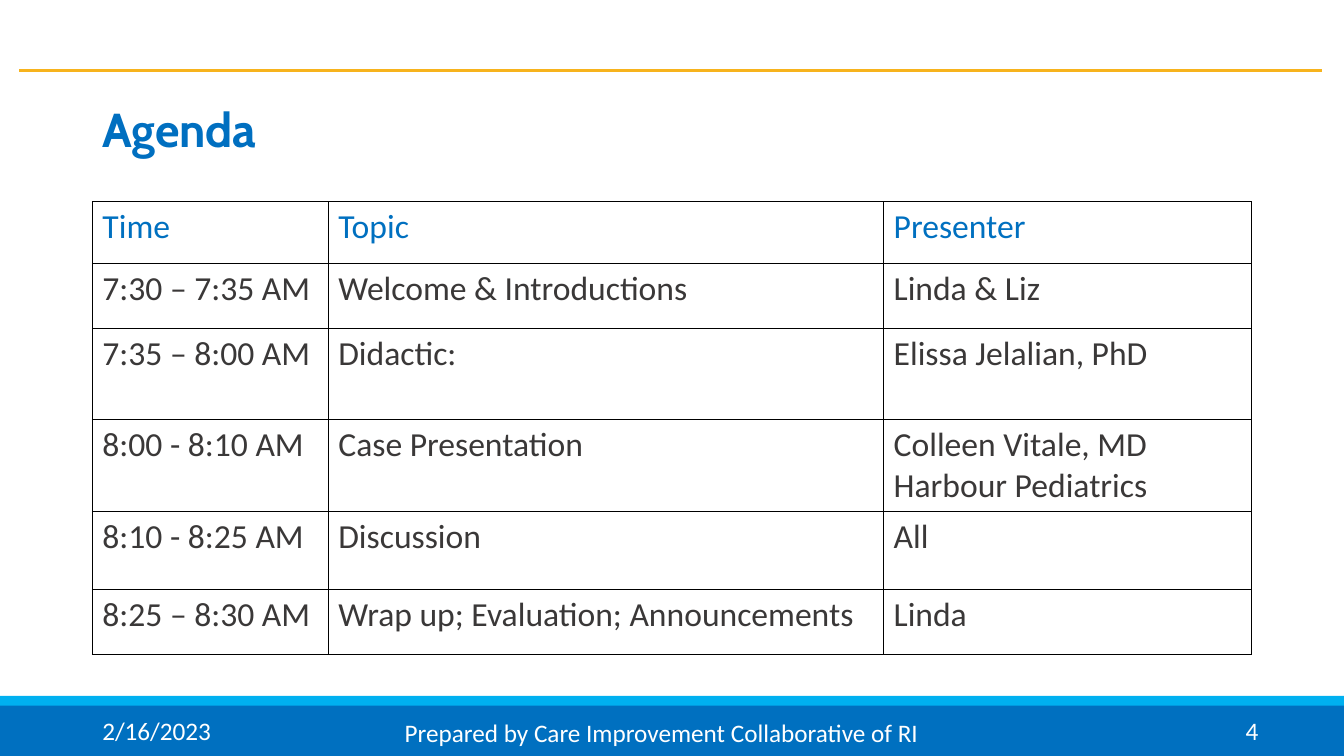
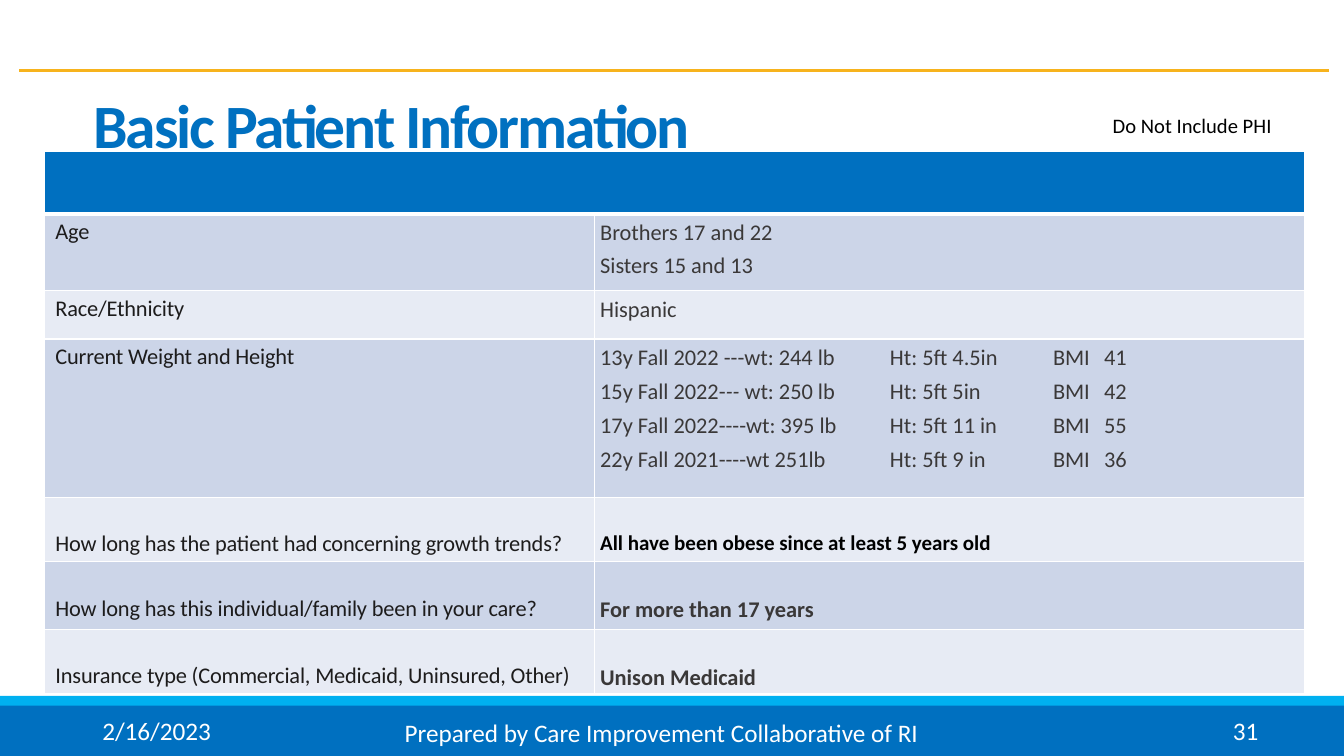
from lxml import etree
from pptx import Presentation
from pptx.dml.color import RGBColor
from pptx.enum.shapes import MSO_CONNECTOR, MSO_SHAPE
from pptx.enum.text import MSO_ANCHOR, PP_ALIGN
from pptx.oxml.ns import qn
from pptx.util import Pt

RECTANGLE, STRAIGHT = MSO_SHAPE.RECTANGLE, MSO_CONNECTOR.STRAIGHT
TOP, MIDDLE = MSO_ANCHOR.TOP, MSO_ANCHOR.MIDDLE
LEFT, RIGHT = PP_ALIGN.LEFT, PP_ALIGN.RIGHT

COLORS = {
    "white": "FFFFFF", "black": "000000", "blue": "0070C0", "sky": "00B0F0",
    "gold": "F7B31D", "agenda_title": "006FC0", "text": "3A3838",
    "label": "1D1C1C", "band_dark": "CCD5E8", "band_light": "E7EBF4",
}
BODY_FONT, TITLE_FONT = "Calibri", "Cabin"
WIDTH, HEIGHT = 960, 540
DEFAULT_INSETS = (7.2, 3.6, 7.2, 3.6)

# Content shared by the slides
DATE = "2/16/2023"
CREDIT = "Prepared by Care Improvement Collaborative of RI"

# Agenda: row height, then time, topic and presenter lines
AGENDA_COLUMNS = [168.5, 396.7, 262.8]
AGENDA = [
    (44.3, "Time", "Topic", ["Presenter"]),
    (46.4, "7:30 – 7:35 AM", "Welcome & Introductions", ["Linda & Liz"]),
    (65, "7:35 – 8:00 AM", "Didactic:", ["Elissa Jelalian, PhD"]),
    (65.7, "8:00 - 8:10 AM", "Case Presentation",
     ["Colleen Vitale, MD", "Harbour Pediatrics"]),
    (55.7, "8:10 - 8:25 AM", "Discussion", ["All"]),
    (46.4, "8:25 – 8:30 AM", "Wrap up; Evaluation; Announcements", ["Linda"]),
]

# Patient facts: row height, label, answer lines, answer spacing
PATIENT_COLUMNS = [392.4, 507.6]
PATIENT_HEADER_HEIGHT = 44.6
MEASURE_TABS = [207, 323.5, 360]
FACTS = [
    (54.7, "Age", ["Brothers 17 and 22", "Sisters 15 and 13"], 4),
    (34.6, "Race/Ethnicity", ["Hispanic"], 0),
    (113, "Current Weight and Height", [
        "13y Fall 2022 ---wt: 244 lb\tHt: 5ft 4.5in\tBMI\t41",
        [("15y Fall 2022-", {}), ("-- ", {"italic": True}),
         ("wt: 250 lb\tHt: 5ft 5in\tBMI\t42", {})],
        "17y Fall 2022----wt: 395 lb\tHt: 5ft 11 in\tBMI\t55",
        "22y Fall 2021----wt 251lb\tHt: 5ft 9 in\tBMI\t36",
    ], 4.8),
]
# History: row height, question, answer, answer size, color, top inset
HISTORY = [
    (46.1, "How long has the patient had concerning growth trends?",
     "All have been obese since at least 5 years old", 15, "black", 23.7),
    (48.2, "How long has this individual/family been in your care?",
     "For more than 17 years", 16, "text", 24.9),
    (46.1, "Insurance type (Commercial, Medicaid, Uninsured, Other)",
     "Unison Medicaid", 16, "text", 24.9),
]


def rgb(name):
    return RGBColor.from_string(COLORS[name])


def write(frame, lines, size, color, font=BODY_FONT, bold=False, align=LEFT,
          gap=0, leading=None, tracking=0, tabs=()):
    """Fill a text frame; a line is a string or a list of (text, style)."""
    for index, line in enumerate(lines):
        para = frame.paragraphs[0] if index == 0 else frame.add_paragraph()
        para.alignment = align
        para.space_before = Pt(gap if index else 0)
        if leading:
            para.line_spacing = leading
        if tabs:
            stops = etree.SubElement(para._p.get_or_add_pPr(), qn("a:tabLst"))
            for stop in tabs:
                etree.SubElement(stops, qn("a:tab"), pos=str(Pt(stop)), algn="l")
        for text, style in [(line, {})] if isinstance(line, str) else line:
            span = para.add_run()
            span.text = text
            span.font.name, span.font.size = font, Pt(size)
            span.font.bold = bold
            span.font.italic = style.get("italic", False)
            span.font.color.rgb = rgb(color)
            if tracking:
                span._r.get_or_add_rPr().set("spc", str(round(tracking * 100)))


def add_text(page, text, left, top, width, height, size, color,
             anchor=TOP, insets=DEFAULT_INSETS, **style):
    box = page.shapes.add_textbox(Pt(left), Pt(top), Pt(width), Pt(height))
    frame = box.text_frame
    frame.word_wrap = True
    frame.vertical_anchor = anchor
    (frame.margin_left, frame.margin_top,
     frame.margin_right, frame.margin_bottom) = map(Pt, insets)
    write(frame, [text], size, color, **style)


def add_band(page, top, color):
    band = page.shapes.add_shape(
        RECTANGLE, 0, Pt(top), Pt(WIDTH), Pt(HEIGHT - top))
    band.shadow.inherit = False
    band.fill.solid()
    band.fill.fore_color.rgb = rgb(color)
    band.line.fill.background()


def add_page(deck, number, rule_end, rule_width):
    """Add a slide with the top rule, the bottom bands and the footer."""
    page = deck.slides.add_slide(deck.slide_layouts[6])
    add_band(page, 497, "sky")
    rule = page.shapes.add_connector(
        STRAIGHT, Pt(13.7), Pt(50.4), Pt(rule_end), Pt(50.4))
    rule.line.color.rgb = rgb("gold")
    rule.line.width = Pt(rule_width)
    etree.SubElement(rule._element.spPr, qn("a:effectLst"))
    add_band(page, 504, "blue")
    for text, left, top, width, align in [
        (DATE, 66, 507.5, 216, LEFT),
        (str(number), 690, 507.5, 216, RIGHT),
        (CREDIT, 282, 508.5, 397, LEFT),
    ]:
        add_text(page, text, left, top, width, 29, 18, "white", align=align)
    return page


def add_title(page, text, size, color, **style):
    add_text(page, text, 66, 50.4, 828, 82.8, size, color,
             anchor=MIDDLE, bold=True, **style)


def add_grid(page, left, top, columns, rows):
    frame = page.shapes.add_table(len(rows), len(columns), Pt(left), Pt(top),
                                  Pt(sum(columns)), Pt(sum(rows)))
    table = frame.table
    table.first_row = table.horz_banding = False
    for column, width in zip(table.columns, columns):
        column.width = Pt(width)
    for row, height in zip(table.rows, rows):
        row.height = Pt(height)
    return table


def style_cell(cell, border, fill=None, insets=DEFAULT_INSETS, widths=None):
    """Set insets, the four borders and the fill of a cell."""
    (cell.margin_left, cell.margin_top,
     cell.margin_right, cell.margin_bottom) = map(Pt, insets)
    properties = cell._tc.get_or_add_tcPr()
    for side in ("lnL", "lnR", "lnT", "lnB"):
        width = (widths or {}).get(side, 1)
        line = etree.SubElement(properties, qn("a:" + side), w=str(Pt(width)))
        solid = etree.SubElement(line, qn("a:solidFill"))
        etree.SubElement(solid, qn("a:srgbClr"), val=COLORS[border])
    if fill:
        cell.fill.solid()
        cell.fill.fore_color.rgb = rgb(fill)
    else:
        cell.fill.background()


def build_agenda(deck):
    page = add_page(deck, 4, 944, 2)
    add_title(page, "Agenda", 34, "agenda_title", font=TITLE_FONT)
    table = add_grid(page, 66, 144, AGENDA_COLUMNS, [row[0] for row in AGENDA])
    for index, (_, time, topic, presenters) in enumerate(AGENDA):
        color = "text" if index else "blue"
        for column, lines in enumerate([[time], [topic], presenters]):
            cell = table.cell(index, column)
            style_cell(cell, "black")
            write(cell.text_frame, lines, 24, color)


def build_patient(deck):
    page = add_page(deck, 31, 949, 2.28)
    add_title(page, "Basic Patient Information", 44, "blue",
              insets=(0.7, 0.7, 0, 0), leading=0.9, tracking=-1.5)
    heights = [PATIENT_HEADER_HEIGHT] + [row[0] for row in FACTS + HISTORY]
    table = add_grid(page, 32, 108.3, PATIENT_COLUMNS, heights)

    # Header band across both columns
    table.cell(0, 0).merge(table.cell(0, 1))
    for column in range(2):
        style_cell(table.cell(0, column), "white", "blue", widths={"lnB": 3})

    def fill_row(index, label, label_top, leading, lines, answer_top, **style):
        band = "band_dark" if index % 2 else "band_light"
        left, right = table.cell(index, 0), table.cell(index, 1)
        style_cell(left, "white", band, (7.6, label_top, 0, 0))
        write(left.text_frame, [label], 16, "label",
              leading=leading, tracking=-0.1)
        style_cell(right, "white", band, (4.3, answer_top, 0, 0))
        write(right.text_frame, lines, **style)

    for index, (_, label, lines, gap) in enumerate(FACTS, 1):
        tabs = MEASURE_TABS if "\t" in lines[0] else ()
        fill_row(index, label, 2.9, None, lines, 3.6,
                 size=16, color="text", gap=gap, tabs=tabs)
    for index, (_, label, answer, size, color, inset) in enumerate(
            HISTORY, len(FACTS) + 1):
        fill_row(index, label, 21.6, Pt(21.6), [answer], inset,
                 size=size, color=color, bold=True)

    add_text(page, "Do Not Include PHI", 787.7, 77, 144, 25, 14.7, "black")


def main():
    deck = Presentation()
    deck.slide_width, deck.slide_height = Pt(WIDTH), Pt(HEIGHT)
    build_agenda(deck)
    build_patient(deck)
    deck.save("out.pptx")


if __name__ == "__main__":
    main()
